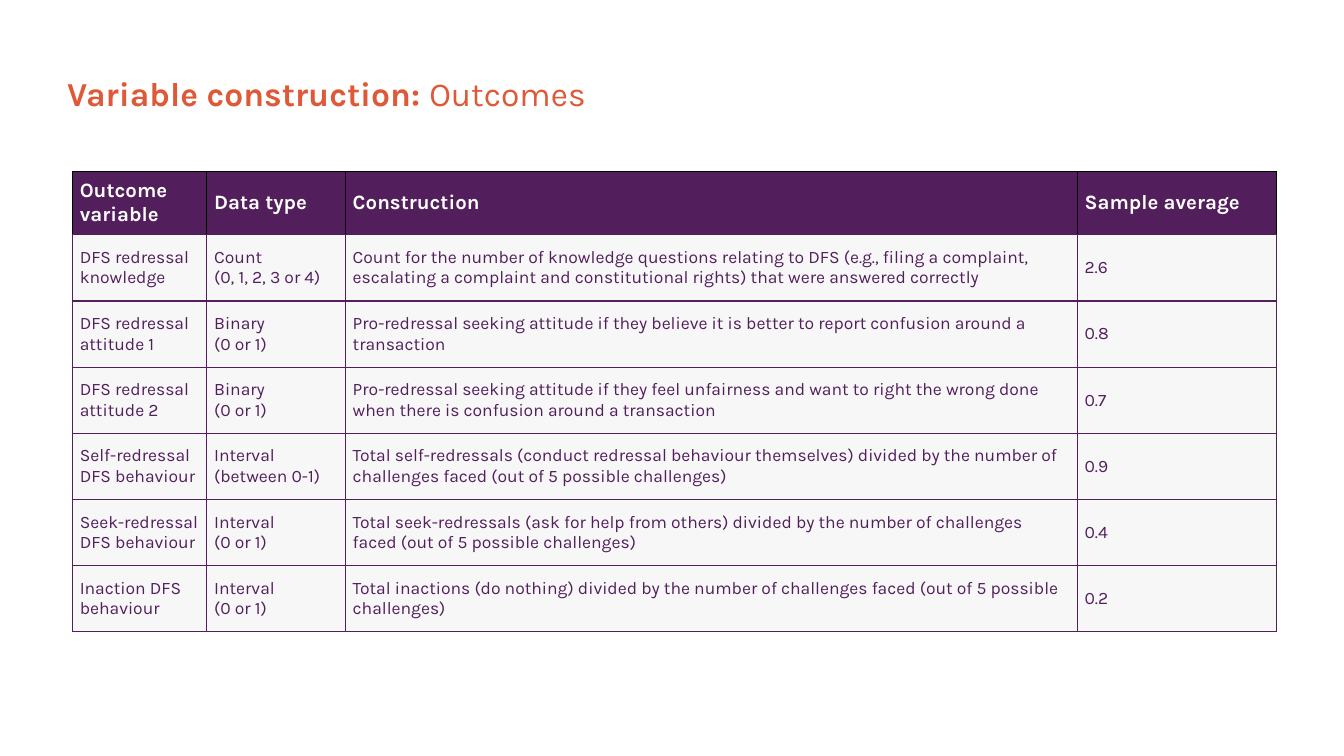
"""Build the slide that lists how the outcome variables are constructed."""
from dataclasses import dataclass

from lxml import etree
from pptx import Presentation
from pptx.dml.color import RGBColor
from pptx.enum.text import MSO_ANCHOR
from pptx.oxml.ns import qn
from pptx.slide import Slide
from pptx.util import Pt

MIDDLE = MSO_ANCHOR.MIDDLE
ORANGE = RGBColor(0xDD, 0x59, 0x38)
PURPLE = RGBColor(0x52, 0x1F, 0x5C)
PALE = RGBColor(0xF7, 0xF7, 0xF7)
WHITE = RGBColor(0xFF, 0xFF, 0xFF)
BLACK = RGBColor(0x00, 0x00, 0x00)

COLUMN_WIDTHS = [92.16, 95.04, 501.84, 136.8]
HEADER_HEIGHT = 42.8
ROW_HEIGHT = 45.36
HEADER = ["Outcome variable", "Data type", "Construction", "Sample average"]
OUTCOMES = [
    ["DFS redressal knowledge", "Count\n(0, 1, 2, 3 or 4)",
     "Count for the number of knowledge questions relating to DFS (e.g., filing a complaint, "
     "escalating a complaint and constitutional rights) that were answered correctly", "2.6"],
    ["DFS redressal attitude 1", "Binary\n(0 or 1)",
     "Pro-redressal seeking attitude if they believe it is better to report confusion around a "
     "transaction", "0.8"],
    ["DFS redressal attitude 2", "Binary\n(0 or 1)",
     "Pro-redressal seeking attitude if they feel unfairness and want to right the wrong done "
     "when there is confusion around a transaction", "0.7"],
    ["Self-redressal DFS behaviour", "Interval\n(between 0-1)",
     "Total self-redressals (conduct redressal behaviour themselves) divided by the number of "
     "challenges faced (out of 5 possible challenges)", "0.9"],
    ["Seek-redressal DFS behaviour", "Interval\n(0 or 1)",
     "Total seek-redressals (ask for help from others) divided by the number of challenges "
     "faced (out of 5 possible challenges)", "0.4"],
    ["Inaction DFS behaviour", "Interval\n(0 or 1)",
     "Total inactions (do nothing) divided by the number of challenges faced (out of 5 possible "
     "challenges)", "0.2"],
]


@dataclass
class OutcomePage:
    page: Slide
    font: str = "Karla"
    inset: float = 5.04
    border: float = 1

    def span(self, para, text, size, color, bold=False):
        span = para.add_run()
        span.text = text
        span.font.name = self.font
        span.font.size = Pt(size)
        span.font.bold = bold
        span.font.color.rgb = color

    def title(self, left, top, width, height, lead, rest):
        box = self.page.shapes.add_textbox(Pt(left), Pt(top), Pt(width), Pt(height))
        frame = box.text_frame
        frame.word_wrap = True
        frame.vertical_anchor = MIDDLE
        frame.margin_left = frame.margin_right = frame.margin_top = frame.margin_bottom = 0
        para = frame.paragraphs[0]
        self.span(para, lead, 23, ORANGE, bold=True)
        self.span(para, rest, 23, ORANGE)

    def borders(self, cell, color):
        properties = cell._tc.get_or_add_tcPr()
        for side, shade in (("L", color), ("R", color), ("T", color), ("B", PURPLE)):
            line = etree.SubElement(properties, qn(f"a:ln{side}"), w=str(Pt(self.border)))
            fill = etree.SubElement(line, qn("a:solidFill"))
            etree.SubElement(fill, qn("a:srgbClr"), val=str(shade))

    def cell(self, cell, text, is_header):
        size, color, fill, edge = (14, WHITE, PURPLE, BLACK) if is_header else (12, PURPLE, PALE, PURPLE)
        self.borders(cell, edge)
        cell.fill.solid()
        cell.fill.fore_color.rgb = fill
        cell.vertical_anchor = MIDDLE
        cell.margin_left = cell.margin_right = Pt(self.inset)
        cell.margin_top = cell.margin_bottom = Pt(self.inset)
        frame = cell.text_frame
        for index, line in enumerate(text.split("\n")):
            para = frame.add_paragraph() if index else frame.paragraphs[0]
            self.span(para, line, size, color, bold=is_header)

    def table(self, left, top, widths, heights, rows):
        table = self.page.shapes.add_table(
            len(rows), len(widths), Pt(left), Pt(top), Pt(sum(widths)), Pt(sum(heights))).table
        table.horz_banding = False
        for column, width in zip(table.columns, widths):
            column.width = Pt(width)
        for index, (row, height, texts) in enumerate(zip(table.rows, heights, rows)):
            row.height = Pt(height)
            for cell, text in zip(row.cells, texts):
                self.cell(cell, text, is_header=index == 0)


def main():
    deck = Presentation()
    deck.slide_width, deck.slide_height = Pt(921.6), Pt(518.4)
    outcomes = OutcomePage(deck.slides.add_slide(deck.slide_layouts[6]))
    outcomes.title(46.08, 20.88, 829.44, 86.4, "Variable construction: ", "Outcomes")
    heights = [HEADER_HEIGHT] + [ROW_HEIGHT] * len(OUTCOMES)
    outcomes.table(49.68, 117.36, COLUMN_WIDTHS, heights, [HEADER] + OUTCOMES)
    deck.save("out.pptx")


if __name__ == "__main__":
    main()
